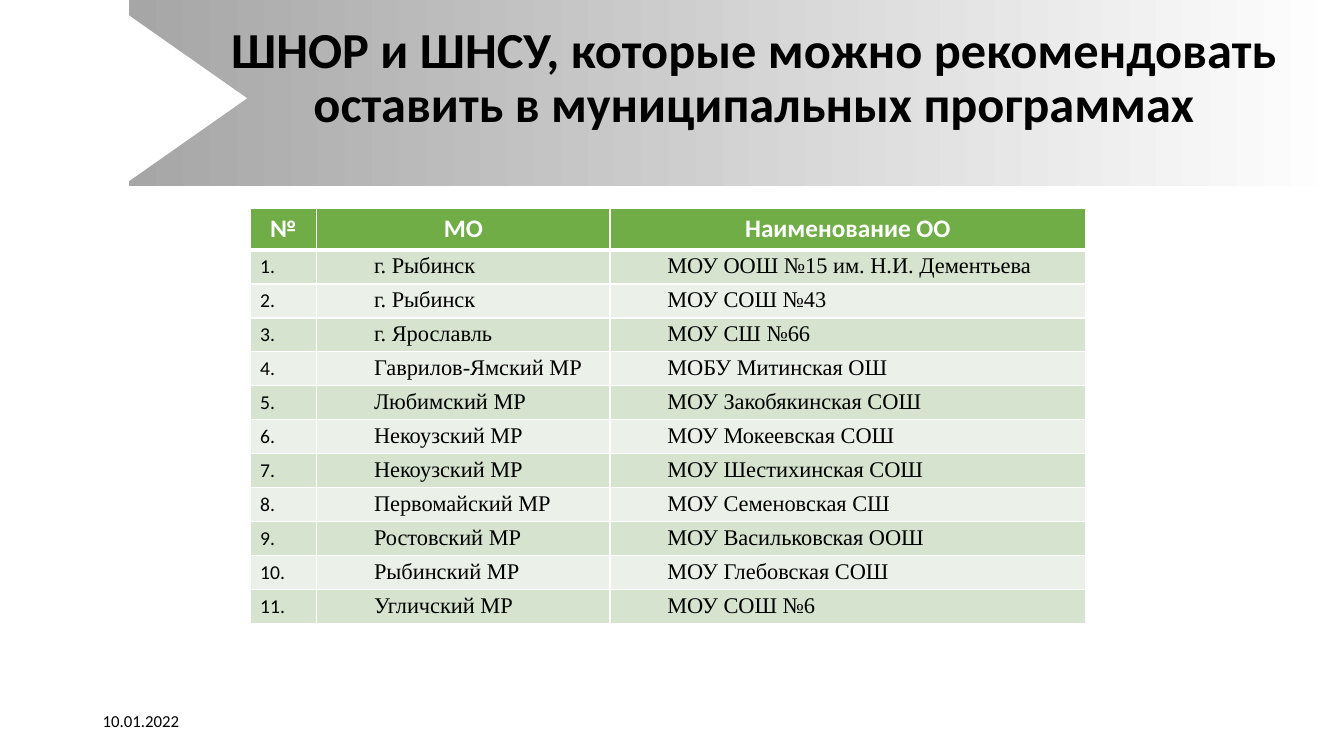
import dataclasses

import pptx
import pptx.dml.color
import pptx.enum.shapes
import pptx.enum.text
import pptx.oxml
import pptx.oxml.ns
import pptx.util

Inches = pptx.util.Inches
Align = pptx.enum.text.PP_ALIGN
Anchor = pptx.enum.text.MSO_ANCHOR
Preset = pptx.enum.shapes.MSO_SHAPE


@dataclasses.dataclass(frozen=True)
class Theme:
    """Colours, fonts and type sizes of the slide."""

    white: str = "FFFFFF"
    black: str = "000000"
    banner: str = "A6A6A6"
    header: str = "70AD47"
    bands: tuple = ("D5E3CF", "EBF1E9")
    sans: str = "Calibri"
    serif: str = "Times New Roman"
    title_size: int = 36
    header_size: int = 18
    school_size: int = 16
    number_size: int = 14
    date_size: int = 12


THEME = Theme()
TITLE = "ШНОР и ШНСУ, которые можно рекомендовать оставить в муниципальных программах"
HEADERS = ("№", "МО", "Наименование ОО")
SCHOOLS = (
    ("г. Рыбинск", "МОУ ООШ №15 им. Н.И. Дементьева"),
    ("г. Рыбинск", "МОУ СОШ №43"),
    ("г. Ярославль", "МОУ СШ №66"),
    ("Гаврилов-Ямский МР", "МОБУ Митинская ОШ"),
    ("Любимский МР", "МОУ Закобякинская СОШ"),
    ("Некоузский МР", "МОУ Мокеевская СОШ"),
    ("Некоузский МР", "МОУ Шестихинская СОШ"),
    ("Первомайский МР", "МОУ Семеновская СШ"),
    ("Ростовский МР", "МОУ Васильковская ООШ"),
    ("Рыбинский МР", "МОУ Глебовская СОШ"),
    ("Угличский МР", "МОУ СОШ №6"),
)
COLUMN_WIDTHS = (0.66, 2.91, 4.72)
HEADER_HEIGHT = 0.41
TABLE_HEIGHT = 4.12


def rgb(value):
    """Turn a hex string into a colour."""
    return pptx.dml.color.RGBColor.from_string(value)


def write(frame, text, size, font=THEME.sans, color=THEME.black, bold=False,
          align=Align.LEFT, spacing=1.0):
    """Fill a text frame with one styled paragraph."""
    paragraph = frame.paragraphs[0]
    paragraph.text = text
    paragraph.alignment = align
    paragraph.line_spacing = spacing
    paragraph.font.size = pptx.util.Pt(size)
    paragraph.font.name = font
    paragraph.font.bold = bold
    paragraph.font.color.rgb = rgb(color)
    return paragraph


def add_plain_shape(slide, preset, left, top, width, height):
    """Add a preset shape without outline or shadow."""
    shape = slide.shapes.add_shape(
        preset, Inches(left), Inches(top), Inches(width), Inches(height))
    shape.shadow.inherit = False
    shape.line.fill.background()
    return shape


def add_banner(slide):
    """Add the fading banner with its notch."""
    banner = add_plain_shape(slide, Preset.RECTANGLE, 1.28, 0, 12.06, 1.85)
    banner.fill.gradient()
    banner.fill.gradient_angle = 0
    for stop, color in zip(banner.fill.gradient_stops, (THEME.banner, THEME.white)):
        stop.color.rgb = rgb(color)
    notch = add_plain_shape(slide, Preset.DIAMOND, 0.1, 0.15, 2.35, 1.65)
    notch.fill.solid()
    notch.fill.fore_color.rgb = rgb(THEME.white)


def add_text(slide, left, top, width, height, text, size, **style):
    """Add a wrapped, vertically centred text box."""
    box = slide.shapes.add_textbox(
        Inches(left), Inches(top), Inches(width), Inches(height))
    box.text_frame.word_wrap = True
    box.text_frame.vertical_anchor = Anchor.MIDDLE
    write(box.text_frame, text, size, **style)


def style_cell(cell, fill, top=1, bottom=1):
    """Give a cell white borders and a solid fill."""
    properties = cell._tc.get_or_add_tcPr()
    for side, points in (("L", 1), ("R", 1), ("T", top), ("B", bottom)):
        properties.append(pptx.oxml.parse_xml(
            f'<a:ln{side} {pptx.oxml.ns.nsdecls("a")} w="{pptx.util.Pt(points)}">'
            f'<a:solidFill><a:srgbClr val="{THEME.white}"/></a:solidFill></a:ln{side}>'))
    cell.fill.solid()
    cell.fill.fore_color.rgb = rgb(fill)


def write_school_cell(cell, text, align):
    """Write an indented entry in the serif font."""
    cell.margin_left = cell.margin_right = Inches(0.07)
    cell.margin_top = cell.margin_bottom = 0
    paragraph = write(cell.text_frame, text, THEME.school_size, font=THEME.serif,
                      align=align, spacing=1.15)
    paragraph._p.get_or_add_pPr().set("marL", str(Inches(0.5)))


def add_school_table(slide):
    """Add the numbered table of schools."""
    table = slide.shapes.add_table(
        len(SCHOOLS) + 1, len(HEADERS), Inches(2.48), Inches(2.07),
        Inches(sum(COLUMN_WIDTHS)), Inches(TABLE_HEIGHT)).table
    for column, width in zip(table.columns, COLUMN_WIDTHS):
        column.width = Inches(width)
    for row in table.rows:
        row.height = Inches((TABLE_HEIGHT - HEADER_HEIGHT) / len(SCHOOLS))
    table.rows[0].height = Inches(HEADER_HEIGHT)

    for cell, text in zip(table.rows[0].cells, HEADERS):
        style_cell(cell, THEME.header, bottom=3)
        write(cell.text_frame, text, THEME.header_size, color=THEME.white,
              bold=True, align=Align.CENTER)
    for number, (district, school) in enumerate(SCHOOLS, start=1):
        cells = list(table.rows[number].cells)
        for cell in cells:
            style_cell(cell, THEME.bands[(number - 1) % 2], top=3 if number == 1 else 1)
        write(cells[0].text_frame, f"{number}.", THEME.number_size)
        write_school_cell(cells[1], district, Align.LEFT)
        write_school_cell(cells[2], school, Align.JUSTIFY)


def main():
    """Build the slide and save it."""
    presentation = pptx.Presentation()
    presentation.slide_width = Inches(13.33)
    presentation.slide_height = Inches(7.5)
    slide = presentation.slides.add_slide(presentation.slide_layouts[6])
    add_banner(slide)
    add_text(slide, 1.73, 0.06, 11.5, 1.45, TITLE, THEME.title_size,
             bold=True, align=Align.CENTER, spacing=0.9)
    add_school_table(slide)
    add_text(slide, 0.92, 6.95, 3, 0.4, "10.01.2022", THEME.date_size)
    presentation.save("out.pptx")


if __name__ == "__main__":
    main()
